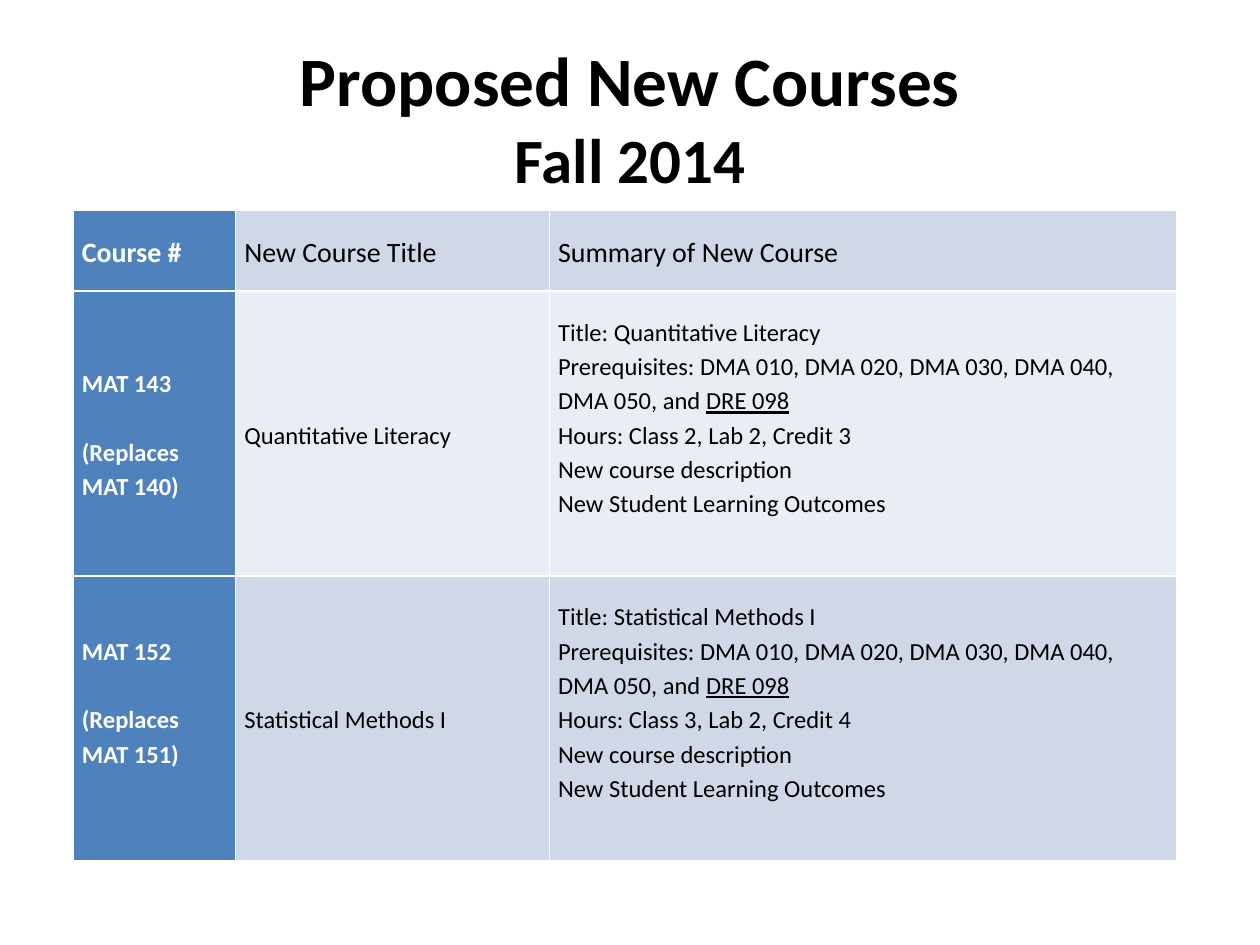
import pptx
import pptx.dml.color
import pptx.enum.text
import pptx.oxml
import pptx.oxml.ns
import pptx.util

Inches, Pt = pptx.util.Inches, pptx.util.Pt
WIDE, HIGH = 10, 7.5
FONT = "Calibri"
BLUE, DARK, PALE = "4F81BD", "D0D8E8", "E9EDF4"
BLACK, WHITE = "000000", "FFFFFF"
COLS = (1.29, 2.49, 4.98)
ROWS = (0.64, 2.26, 2.26)
LINE = 19.6  # points, one line of body text
NEEDS = "Prerequisites: DMA 010, DMA 020, DMA 030, DMA 040, DMA 050, and "

# number, replaced course, title, hours, empty lines below the number
COURSES = (
    ("MAT 143", "MAT 140", "Quantitative Literacy", "Class 2, Lab 2, Credit 3", 0),
    ("MAT 152", "MAT 151", "Statistical Methods I", "Class 3, Lab 2, Credit 4", 1),
)


def color(code):
    return pptx.dml.color.RGBColor.from_string(code)


def write(para, text, size=14, ink=BLACK, bold=False, line=False):
    run = para.add_run()
    run.text = text
    font = run.font
    font.name, font.size, font.bold = FONT, Pt(size), bold
    font.underline = line
    font.color.rgb = color(ink)


def add_title(slide):
    title = slide.shapes.title
    title.left, title.top = Inches(0.05 * WIDE), Inches(0.04 * HIGH)
    title.width, title.height = Inches(0.9 * WIDE), Inches(1.25)
    frame = title.text_frame
    frame.auto_size = pptx.enum.text.MSO_AUTO_SIZE.NONE
    frame.vertical_anchor = pptx.enum.text.MSO_ANCHOR.MIDDLE
    para = frame.paragraphs[0]
    para.alignment = pptx.enum.text.PP_ALIGN.CENTER
    write(para, "Proposed New Courses", size=39.6, bold=True)
    para.add_line_break()
    write(para, "Fall 2014", size=36, bold=True)


def edge(cell):
    """Draw thin white borders; they must come before the fill in the XML."""
    props = cell._tc.get_or_add_tcPr()
    space = pptx.oxml.ns.nsdecls("a")
    for side in ("lnL", "lnR", "lnT", "lnB"):
        props.append(pptx.oxml.parse_xml(
            f'<a:{side} {space} w="12700"><a:solidFill>'
            f'<a:srgbClr val="{WHITE}"/></a:solidFill></a:{side}>'))


def fill_cell(cell, paras, back, gap=0, below=0, **style):
    """Each paragraph is a list of (text, underlined) pairs."""
    edge(cell)
    cell.fill.solid()
    cell.fill.fore_color.rgb = color(back)
    cell.vertical_anchor = pptx.enum.text.MSO_ANCHOR.MIDDLE
    cell.margin_left = cell.margin_right = Inches(0.07)
    cell.margin_top, cell.margin_bottom = 0, Pt(below)
    frame = cell.text_frame
    for i, parts in enumerate(paras):
        para = frame.add_paragraph() if i else frame.paragraphs[0]
        para.line_spacing = 1.15
        if i:
            para.space_before = Pt(gap)
        for text, line in parts:
            write(para, text, line=line, **style)


def plain(*texts):
    return [[(text, False)] for text in texts]


def add_table(slide):
    table = slide.shapes.add_table(
        len(ROWS), len(COLS), Inches(0.58), Inches(1.67),
        Inches(sum(COLS)), Inches(sum(ROWS))).table
    table.first_row = table.horz_banding = False
    table.first_col = True
    for col, width in zip(table.columns, COLS):
        col.width = Inches(width)
    for row, height in zip(table.rows, ROWS):
        row.height = Inches(height)
    return table


def fill_table(table):
    heads = ("Course #", "New Course Title", "Summary of New Course")
    for i, head in enumerate(heads):
        fill_cell(table.cell(0, i), plain(head), DARK if i else BLUE,
                  size=16, ink=BLACK if i else WHITE, bold=not i)
    for row, (code, old, name, hours, spare) in enumerate(COURSES, 1):
        back = PALE if row % 2 else DARK
        fill_cell(table.cell(row, 0), plain(code, f"(Replaces {old})"), BLUE,
                  gap=LINE, below=spare * LINE, ink=WHITE, bold=True)
        fill_cell(table.cell(row, 1), plain(name), back)
        summary = plain(f"Title: {name}", f"Hours: {hours}",
                        "New course description",
                        "New Student Learning Outcomes")
        summary.insert(1, [(NEEDS, False), ("DRE 098", True)])
        fill_cell(table.cell(row, 2), summary, back, below=LINE)


def main():
    deck = pptx.Presentation()
    deck.slide_width, deck.slide_height = Inches(WIDE), Inches(HIGH)
    slide = deck.slides.add_slide(deck.slide_layouts[5])
    add_title(slide)
    fill_table(add_table(slide))
    deck.save("out.pptx")


if __name__ == "__main__":
    main()
